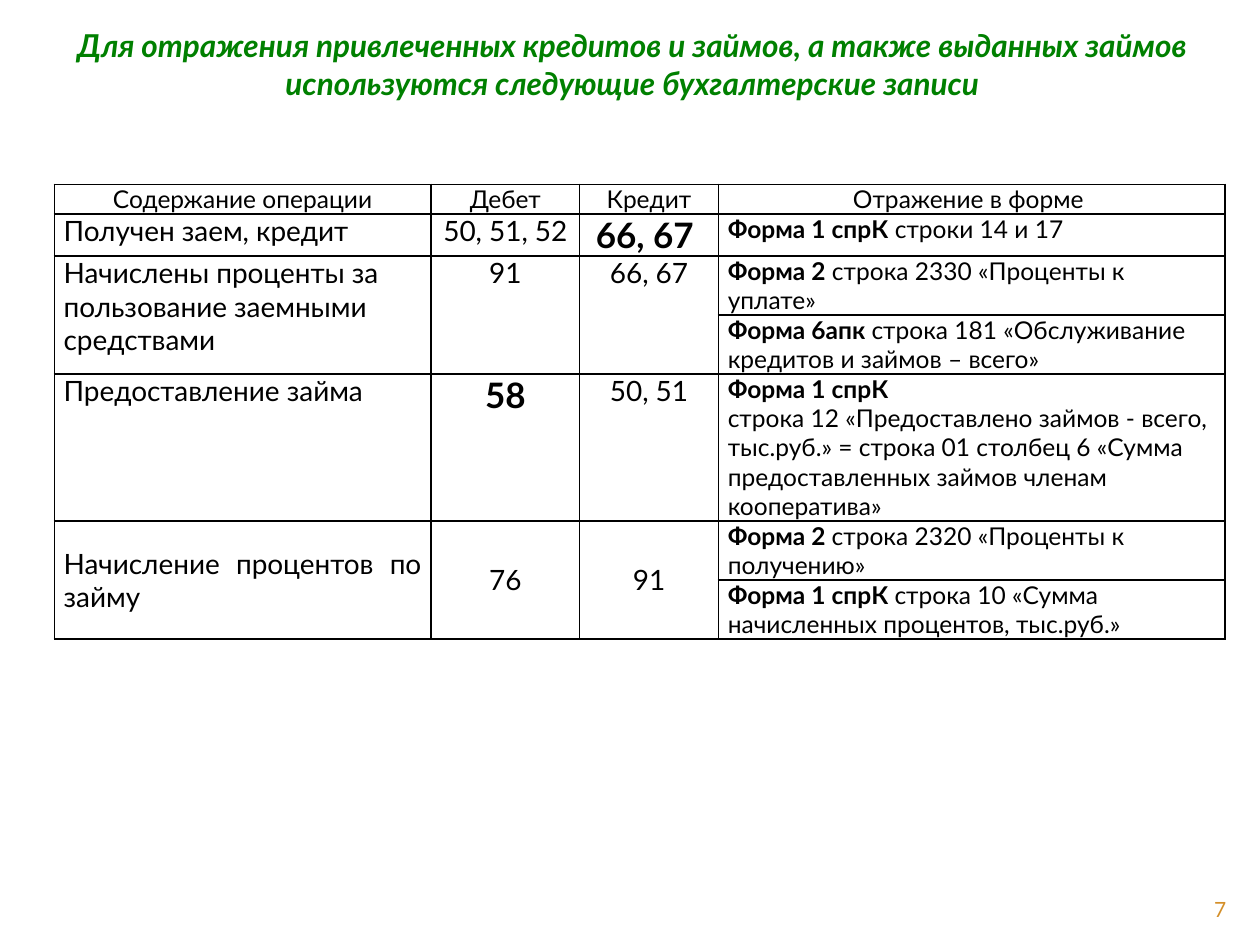
from dataclasses import dataclass

from lxml import etree
from pptx import Presentation
from pptx.dml.color import RGBColor
from pptx.enum.text import MSO_ANCHOR, MSO_AUTO_SIZE, PP_ALIGN
from pptx.oxml.ns import qn
from pptx.util import Pt

LEFT, MID, RIGHT, JUST = PP_ALIGN.LEFT, PP_ALIGN.CENTER, PP_ALIGN.RIGHT, PP_ALIGN.JUSTIFY
TOP, HALF = MSO_ANCHOR.TOP, MSO_ANCHOR.MIDDLE
NO_FIT = MSO_AUTO_SIZE.NONE
FONT = "Lato"
COLORS = {"ink": "000000", "title": "008000", "number": "D48F29"}


@dataclass
class Entry:
    row: int
    col: int
    text: str
    size: float = 16
    align: PP_ALIGN = MID
    bold: bool = False
    span: int = 1
    anchor: MSO_ANCHOR = TOP


@dataclass
class Form:
    row: int
    head: str
    tail: str
    split: bool = False  # tail goes in its own paragraph


HEADS = ["Содержание операции", "Дебет", "Кредит", "Отражение в форме "]
ENTRIES = [Entry(0, col, text, 14) for col, text in enumerate(HEADS)] + [
    Entry(1, 0, "Получен заем, кредит", align=LEFT),
    Entry(1, 1, "50, 51, 52"),
    Entry(1, 2, "66, 67 ", 20, bold=True),
    Entry(2, 0, "Начислены проценты за пользование заемными средствами", align=LEFT, span=2),
    Entry(2, 1, "91", span=2),
    Entry(2, 2, "66, 67", span=2),
    Entry(4, 0, "Предоставление займа", align=JUST),
    Entry(4, 1, "58", 20, bold=True),
    Entry(4, 2, "50, 51"),
    Entry(5, 0, "Начисление процентов по займу", align=JUST, span=2, anchor=HALF),
    Entry(5, 1, "76", span=2, anchor=HALF),
    Entry(5, 2, "91", span=2, anchor=HALF),
]
FORMS = [
    Form(1, "Форма 1 спрК", " строки 14 и 17"),
    Form(2, "Форма 2", " строка 2330 «Проценты к уплате»"),
    Form(3, "Форма 6апк ", "строка 181 «Обслуживание кредитов и займов – всего»"),
    Form(4, "Форма 1 спрК", "строка 12 «Предоставлено займов - всего, тыс.руб.» = строка 01 "
         "столбец 6 «Сумма предоставленных займов членам кооператива»", True),
    Form(5, "Форма 2 ", "строка 2320 «Проценты к получению»"),
    Form(6, "Форма 1 спрК ", "строка 10 «Сумма начисленных процентов, тыс.руб.»"),
]
WIDTHS = [215.3, 85, 79.2, 289.4]
LINE = 16.8  # height of one 14 pt line
HEIGHTS = [LINE, 24, 2 * LINE, 2 * LINE, 5 * LINE, 2 * LINE, 2 * LINE]


def style(run, size: float, color: str = "ink", bold: bool = False, slant: bool = False) -> None:
    font = run.font
    font.name, font.size, font.bold, font.italic = FONT, Pt(size), bold, slant
    font.color.rgb = RGBColor.from_string(COLORS[color])


def place(shape, left: float, top: float, width: float, height: float) -> None:
    shape.left, shape.top, shape.width, shape.height = map(Pt, (left, top, width, height))


def write(frame, text: str, align: PP_ALIGN, **look) -> None:
    frame.text = text
    for para in frame.paragraphs:
        para.alignment = align
        for run in para.runs:
            style(run, **look)


def frame_cell(cell) -> None:
    """Clear the fill, set the insets and draw a thin border all round."""
    cell.margin_left = cell.margin_right = Pt(5.4)
    cell.margin_top = cell.margin_bottom = 0
    cell.fill.background()
    props = cell._tc.get_or_add_tcPr()
    for spot, side in enumerate(("lnL", "lnR", "lnT", "lnB")):
        line = etree.Element(qn("a:" + side), w=str(Pt(1)))
        fill = etree.SubElement(line, qn("a:solidFill"))
        etree.SubElement(fill, qn("a:srgbClr"), val=COLORS["ink"])
        props.insert(spot, line)


def put_entry(table, item: Entry) -> None:
    cell = table.cell(item.row, item.col)
    if item.span > 1:
        cell.merge(table.cell(item.row + item.span - 1, item.col))
    cell.vertical_anchor = item.anchor
    write(cell.text_frame, item.text, item.align, size=item.size, bold=item.bold)


def put_form(table, item: Form) -> None:
    frame = table.cell(item.row, len(WIDTHS) - 1).text_frame
    write(frame, item.head, LEFT, size=14, bold=True)
    para = frame.add_paragraph() if item.split else frame.paragraphs[0]
    para.alignment = LEFT
    run = para.add_run()
    run.text = item.tail
    style(run, 14)


def main() -> None:
    deck = Presentation()
    deck.slide_width, deck.slide_height = Pt(720), Pt(540)
    slide = deck.slides.add_slide(deck.slide_layouts[5])

    # Title
    title = slide.shapes.title
    place(title, 14.4, 11.5, 694, 65.5)
    frame = title.text_frame
    frame.auto_size, frame.vertical_anchor, frame.word_wrap = NO_FIT, TOP, True
    write(frame, "Для отражения привлеченных кредитов и займов, а также выданных займов "
          "используются следующие бухгалтерские записи", MID,
          size=18, color="title", bold=True, slant=True)

    # Table of entries
    table = slide.shapes.add_table(len(HEIGHTS), len(WIDTHS), Pt(31), Pt(105.4),
                                   Pt(sum(WIDTHS)), Pt(sum(HEIGHTS))).table
    table.horz_banding = table.first_row = False
    for col, width in zip(table.columns, WIDTHS):
        col.width = Pt(width)
    for row, height in zip(table.rows, HEIGHTS):
        row.height = Pt(height)
        for cell in row.cells:
            frame_cell(cell)
    for item in ENTRIES:
        put_entry(table, item)
    for item in FORMS:
        put_form(table, item)

    # Slide number
    box = slide.shapes.add_textbox(Pt(648), Pt(509.8), Pt(59.8), Pt(19.4))
    box.text_frame.word_wrap, box.text_frame.vertical_anchor = True, HALF
    write(box.text_frame, "7", RIGHT, size=12, color="number")

    deck.save("out.pptx")


if __name__ == "__main__":
    main()
